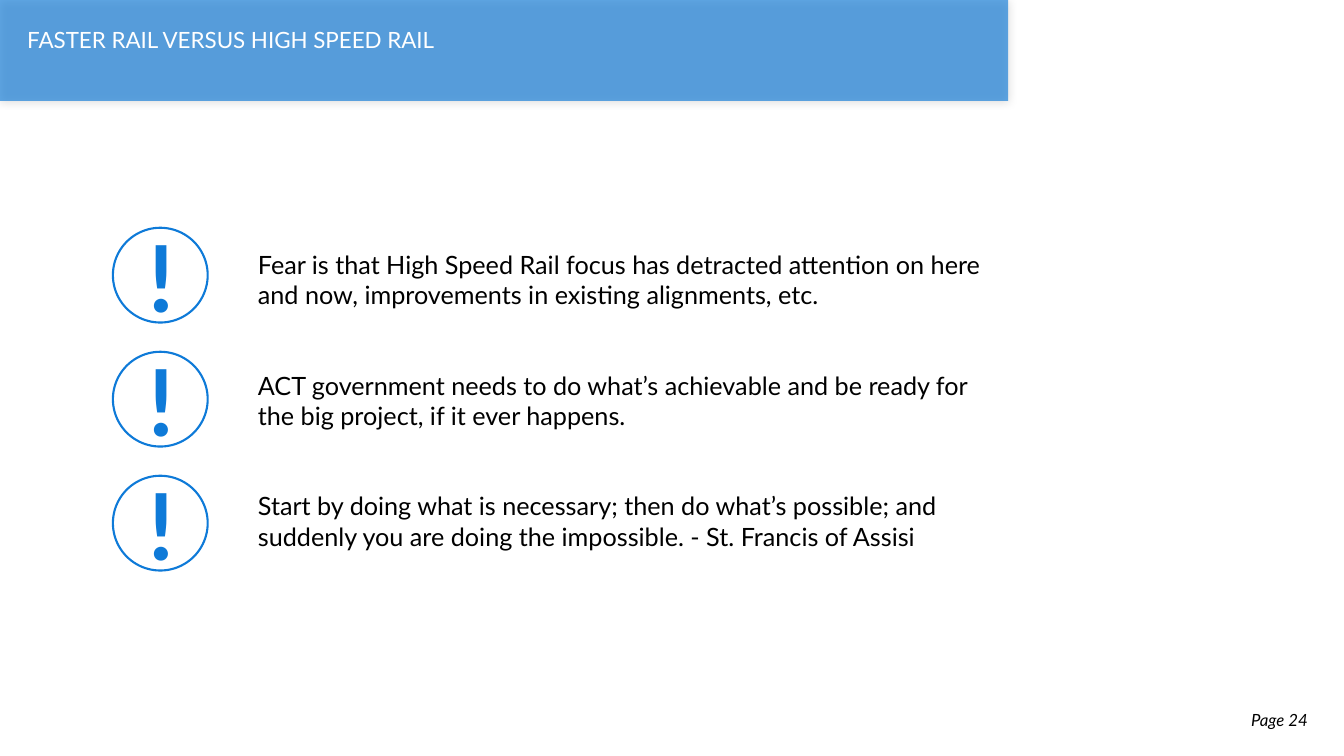
from typing import NamedTuple

from lxml import etree
from pptx import Presentation
from pptx import util as u
from pptx.dml.color import RGBColor
from pptx.enum import shapes, text
from pptx.oxml import ns

BLUE = RGBColor(0x0E, 0x7A, 0xD8)
WHITE = RGBColor(0xFF, 0xFF, 0xFF)
BLACK = RGBColor(0x00, 0x00, 0x00)
FONT = "Lato"

BANNER_CORNERS = [(0, 0.11), (10.36, 0.11), (9.81, 0.72), (0, 0.71)]
BADGE_TOP, BADGE_PITCH, BADGE_SIZE = 2.26, 1.23, 0.94
POINTS = [
    "Fear is that High Speed Rail focus has detracted attention on here "
    "and now, improvements in existing alignments, etc.",
    "ACT government needs to do what’s achievable and be ready for "
    "the big project, if it ever happens.",
    "Start by doing what is necessary; then do what’s possible; and "
    "suddenly you are doing the impossible. - St. Francis of Assisi",
]


class Box(NamedTuple):
    left: float
    top: float
    width: float
    height: float


class Style(NamedTuple):
    size: float
    color: RGBColor
    bold: bool = False
    italic: bool = False
    gap: float = 0


def fill_text(shape, lines: list[str], style: Style) -> None:
    """Write one paragraph per line in the given style."""
    frame = shape.text_frame
    frame_format = {
        "word_wrap": True,
        "auto_size": text.MSO_AUTO_SIZE.NONE,
        "vertical_anchor": text.MSO_ANCHOR.TOP,
        "margin_left": u.Inches(0.1),
        "margin_right": u.Inches(0.1),
        "margin_top": u.Inches(0.05),
        "margin_bottom": u.Inches(0.05),
    }
    for name, value in frame_format.items():
        setattr(frame, name, value)
    font_format = {"name": FONT, "size": u.Pt(style.size),
                   "bold": style.bold, "italic": style.italic}
    for index, line in enumerate(lines):
        paragraph = frame.add_paragraph() if index else frame.paragraphs[0]
        paragraph.alignment = text.PP_ALIGN.LEFT
        if index:
            paragraph.space_before = u.Pt(style.gap)
        run = paragraph.add_run()
        run.text = line
        for name, value in font_format.items():
            setattr(run.font, name, value)
        run.font.color.rgb = style.color


def add_text(slide, box: Box, lines: list[str], style: Style) -> None:
    fill_text(slide.shapes.add_textbox(*map(u.Inches, box)), lines, style)


def add_banner(slide) -> None:
    """Draw the translucent title band behind everything else."""
    builder = slide.shapes.build_freeform(*BANNER_CORNERS[0], scale=u.Inches(1))
    builder.add_line_segments(BANNER_CORNERS[1:], close=True)
    banner = builder.convert_to_shape()
    banner.fill.solid()
    banner.fill.fore_color.rgb = BLUE
    banner.line.fill.background()
    properties = banner._element.spPr
    color = properties.find(f".//{ns.qn('a:solidFill')}/{ns.qn('a:srgbClr')}")
    etree.SubElement(color, ns.qn("a:alpha"), val="65000")
    # Soft shadow
    effects = etree.SubElement(properties, ns.qn("a:effectLst"))
    shadow = etree.SubElement(effects, ns.qn("a:outerShdw"), blurRad=str(u.Pt(6)),
                              dist="0", dir="13500000", rotWithShape="0")
    black = etree.SubElement(shadow, ns.qn("a:srgbClr"), val=str(BLACK))
    etree.SubElement(black, ns.qn("a:alpha"), val="20000")
    slide.shapes._spTree.insert(2, banner._element)


def add_badge(slide, top: float) -> None:
    """Draw a ringed exclamation mark."""
    ring = slide.shapes.add_shape(
        shapes.MSO_SHAPE.OVAL,
        *map(u.Inches, Box(1.12, top, BADGE_SIZE, BADGE_SIZE)))
    ring.shadow.inherit = False
    ring.fill.background()
    ring.line.color.rgb = BLUE
    ring.line.width = u.Pt(1.5)
    add_text(slide, Box(1.37, top - 0.13, 0.46, 1.21), ["!"],
             Style(66, BLUE, bold=True))


def main() -> None:
    deck = Presentation()
    deck.slide_width, deck.slide_height = u.Inches(13.33), u.Inches(7.5)
    slide = deck.slides.add_slide(deck.slide_layouts[5])

    # Title band
    add_banner(slide)
    title = slide.shapes.title
    title_box = Box(0.17, 0.21, 11.71, 0.37)
    for side, length in title_box._asdict().items():
        setattr(title, side, u.Inches(length))
    fill_text(title, ["FASTER RAIL VERSUS HIGH SPEED RAIL"], Style(16, WHITE))

    # Points and their badges
    add_text(slide, Box(2.46, 2.42, 7.6, 3.43), POINTS, Style(18, BLACK, gap=43.2))
    for row in range(len(POINTS)):
        add_badge(slide, BADGE_TOP + row * BADGE_PITCH)

    # Page number
    add_text(slide, Box(12.31, 6.99, 0.91, 0.3), ["Page 24"],
             Style(12, BLACK, italic=True))
    deck.save("out.pptx")


if __name__ == "__main__":
    main()
